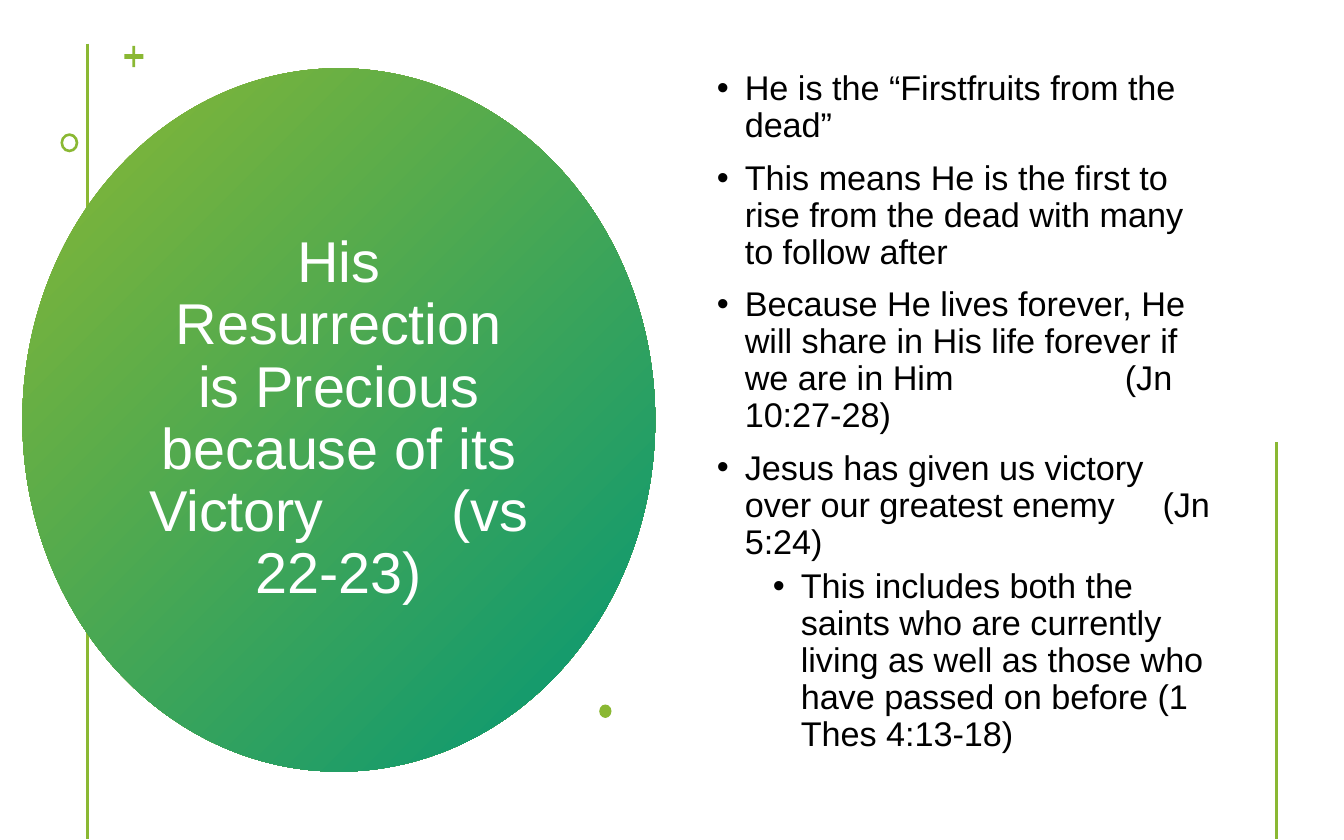
from dataclasses import dataclass

from lxml import etree
from pptx import Presentation
from pptx.dml.color import RGBColor
from pptx.enum.dml import MSO_FILL
from pptx.enum.shapes import MSO_CONNECTOR, MSO_SHAPE
from pptx.enum.text import MSO_ANCHOR, MSO_AUTO_SIZE, PP_ALIGN
from pptx.oxml.ns import qn
from pptx.util import Emu, Inches, Pt

WIDE, HIGH = Inches(12), Inches(7.5)
COL, ROW = WIDE / 12, HIGH / 7.5
LIME = RGBColor(0x8A, 0xB8, 0x33)
TEAL = RGBColor(0x02, 0x96, 0x76)
WHITE = RGBColor(0xFF, 0xFF, 0xFF)
BLACK = RGBColor(0, 0, 0)
OVAL, RING, CROSS = MSO_SHAPE.OVAL, MSO_SHAPE.DONUT, MSO_SHAPE.CROSS
STRAIGHT = MSO_CONNECTOR.STRAIGHT
MIDDLE, CENTER = MSO_ANCHOR.MIDDLE, PP_ALIGN.CENTER
NO_FIT = MSO_AUTO_SIZE.NONE
FONT = "Arial"


@dataclass(frozen=True)
class Box:
    """A place on the grid, in columns and rows."""
    col: float
    row: float
    cols: float
    rows: float

    def emu(self) -> list[Emu]:
        return [Emu(round(n)) for n in (self.col * COL, self.row * ROW,
                                        self.cols * COL, self.rows * ROW)]


@dataclass(frozen=True)
class Mark:
    kind: int
    box: Box
    adjust: float | None = None


@dataclass(frozen=True)
class Point:
    """A list item; gap is the extra space, in points, before its tail."""
    text: str
    tail: str = ""
    gap: float = 0
    level: int = 0


DISC = Box(0.2, 0.61, 5.65, 6.28)
TITLE = Box(1.23, 1.41, 3.59, 4.67)
BODY = Box(6.3, 0.42, 4.61, 6.53)
LEFT_RULE = Box(0.78, 0.39, 0, 7.1)
RIGHT_RULE = Box(11.4, 3.95, 0, 3.54)
MARKS = [
    Mark(CROSS, Box(1.11, 0.41, 0.17, 0.19), 0.43),
    Mark(RING, Box(0.54, 1.19, 0.16, 0.17), 0.15),
    Mark(OVAL, Box(5.35, 6.29, 0.11, 0.12)),
]
HEAD = Point("His Resurrection is Precious because of its Victory",
             "(vs 22-23)", 72)
POINTS = [
    Point("He is the “Firstfruits from the dead”"),
    Point("This means He is the first to rise from the dead with many "
          "to follow after"),
    Point("Because He lives forever, He will share in His life forever "
          "if we are in Him", "(Jn 10:27-28)", 104),
    Point("Jesus has given us victory over our greatest enemy",
          "(Jn 5:24)", 24.4),
    Point("This includes both the saints who are currently living as well "
          "as those who have passed on before (1 Thes 4:13-18)", level=1),
]


def draw_rule(shapes, box: Box) -> None:
    x, y, w, h = box.emu()
    rule = shapes.add_connector(STRAIGHT, x, y, x + w, y + h)
    rule.line.color.rgb = LIME
    rule.line.width = Pt(2)
    etree.SubElement(rule.element.spPr, qn("a:effectLst"))


def draw_shape(shapes, mark: Mark):
    shape = shapes.add_shape(mark.kind, *mark.box.emu())
    shape.shadow.inherit = False
    shape.line.fill.background()
    shape.fill.solid()
    shape.fill.fore_color.rgb = LIME
    if mark.adjust is not None:
        shape.adjustments[0] = mark.adjust
    return shape


def draw_disc(shapes) -> None:
    fill = draw_shape(shapes, Mark(OVAL, DISC)).fill
    fill.gradient()
    fill.gradient_angle = 315
    for stop, place, color in zip(fill.gradient_stops, (0, 1), (LIME, TEAL)):
        stop.position = place
        stop.color.rgb = color


def place_frame(holder, box: Box):
    holder.left, holder.top, holder.width, holder.height = box.emu()
    frame = holder.text_frame
    frame.auto_size = NO_FIT
    frame.word_wrap = True
    frame.vertical_anchor = MIDDLE
    return frame


def write(para, point: Point, size: float, color: RGBColor) -> None:
    para.line_spacing = 0.9
    para.font.name = FONT
    para.font.size = Pt(size)
    para.font.color.rgb = color
    para.add_run().text = point.text
    if point.tail:
        space = para.add_run()
        space.text = " "
        space.font.size = Pt(size)
        space.font.name = FONT
        space.font.color.rgb = color
        space.font._element.set("spc", str(round(point.gap * 100)))
        para.add_run().text = point.tail


def add_bullet(para, level: int) -> None:
    para.level = level
    para.space_before = Pt(5 if level else 10)
    props = para._p.get_or_add_pPr()
    props.set("marL", str(Inches(0.25 + 0.5 * level)))
    props.set("indent", str(-Inches(0.25)))
    bullet = etree.Element(qn("a:buChar"), char="•")
    props.find(qn("a:defRPr")).addprevious(bullet)


def main() -> None:
    deck = Presentation()
    deck.slide_width, deck.slide_height = WIDE, HIGH
    slide = deck.slides.add_slide(deck.slide_layouts[1])
    shapes = slide.shapes
    title, body = shapes.title, slide.placeholders[1]

    draw_rule(shapes, LEFT_RULE)
    draw_disc(shapes)
    for holder in (title, body):  # bring the text in front of the disc
        shapes.element.append(holder.element)

    head = place_frame(title, TITLE).paragraphs[0]
    head.alignment = CENTER
    write(head, HEAD, 37, WHITE)

    frame = place_frame(body, BODY)
    for i, point in enumerate(POINTS):
        para = frame.add_paragraph() if i else frame.paragraphs[0]
        write(para, point, 22, BLACK)
        add_bullet(para, point.level)

    for mark in MARKS:
        draw_shape(shapes, mark)
    draw_rule(shapes, RIGHT_RULE)
    deck.save("out.pptx")


if __name__ == "__main__":
    main()
